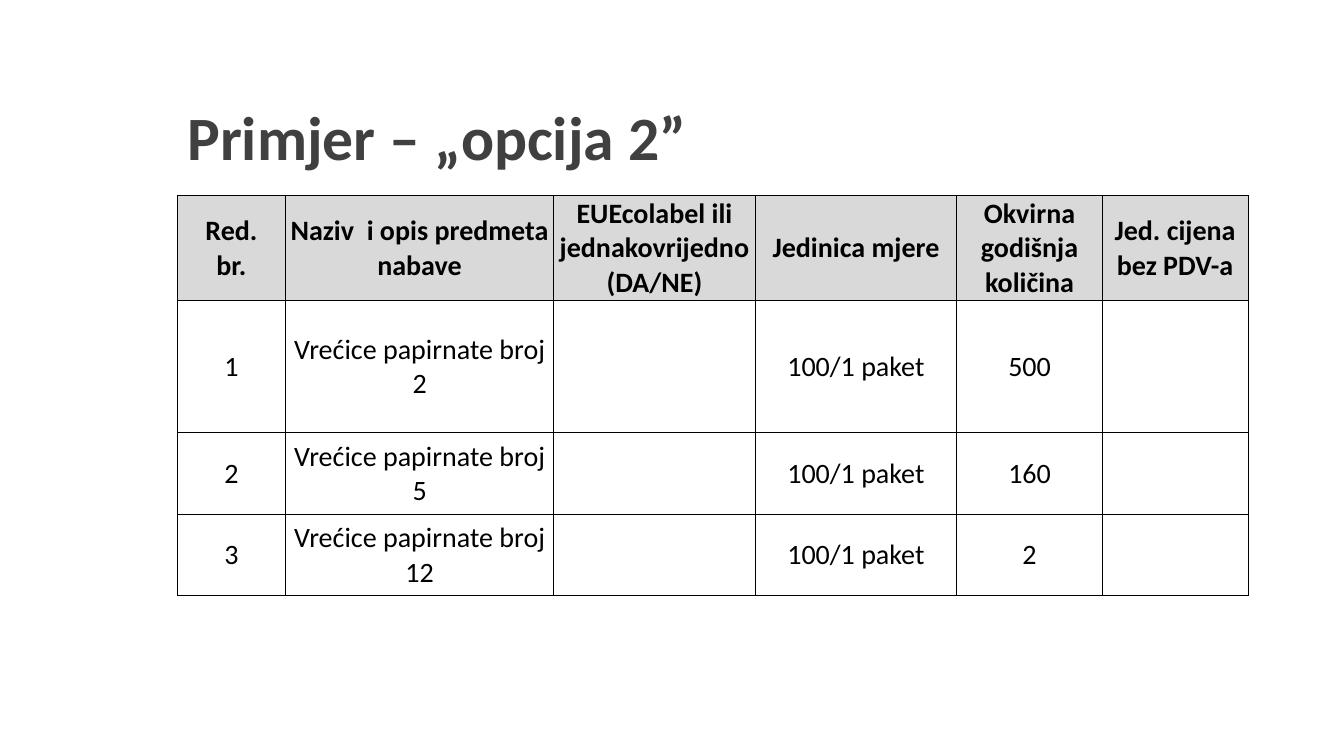
import pptx
import pptx.dml.color
import pptx.enum.text
import pptx.oxml
import pptx.oxml.ns
import pptx.util
from dataclasses import dataclass


@dataclass(frozen=True)
class Theme:
    font: str = "Calibri"
    title_color: str = "404040"
    text_color: str = "000000"
    header_fill: str = "D9D9D9"
    body_fill: str = "FFFFFF"
    border_color: str = "000000"
    border_width: float = 0.5
    title_size: int = 44
    table_size: int = 20


THEME = Theme()
SLIDE_WIDTH = pptx.util.Inches(13.33)
SLIDE_HEIGHT = pptx.util.Inches(7.5)

LEFT = 13.2
TITLE_TOP, TITLE_WIDTH, TITLE_HEIGHT = 11.33, 78.24, 14.53
TABLE_TOP = TITLE_TOP + TITLE_HEIGHT
COLUMN_SHARES = [8.05, 19.95, 15, 15, 10.83, 10.83]
ROW_SHARES = [13.87, 17.47, 10.8, 10.8]

HEADER = [
    "Red.\vbr.",
    "Naziv  i opis predmeta nabave",
    "EUEcolabel ili jednakovrijedno (DA/NE)",
    "Jedinica mjere",
    "Okvirna godišnja količina",
    "Jed. cijena bez PDV-a",
]
ITEMS = [
    ["1", "Vrećice papirnate broj 2", "", "100/1 paket", "500", ""],
    ["2", "Vrećice papirnate broj 5", "", "100/1 paket", "160", ""],
    ["3", "Vrećice papirnate broj 12", "", "100/1 paket", "2", ""],
]


def across(share):
    return round(SLIDE_WIDTH * share / 100)


def down(share):
    return round(SLIDE_HEIGHT * share / 100)


def set_attributes(target, values):
    for name, value in values.items():
        setattr(target, name, value)


def write_text(paragraph, text, size, color, bold):
    paragraph.text = text
    for run in paragraph.runs:
        set_attributes(run.font, {
            "name": THEME.font, "size": pptx.util.Pt(size), "bold": bold,
        })
        run.font.color.rgb = pptx.dml.color.RGBColor.from_string(color)


def add_title(slide, text):
    box = slide.shapes.add_textbox(
        across(LEFT), down(TITLE_TOP), across(TITLE_WIDTH), down(TITLE_HEIGHT))
    set_attributes(box.text_frame, {
        "word_wrap": True,
        "vertical_anchor": pptx.enum.text.MSO_ANCHOR.MIDDLE,
    })
    paragraph = box.text_frame.paragraphs[0]
    paragraph.line_spacing = 0.9
    write_text(paragraph, text, THEME.title_size, THEME.title_color, True)


def add_borders(cell):
    properties = cell._tc.get_or_add_tcPr()
    width = pptx.util.Pt(THEME.border_width)
    for position, side in enumerate(("lnL", "lnR", "lnT", "lnB")):
        properties.insert(position, pptx.oxml.parse_xml(
            f'<a:{side} {pptx.oxml.ns.nsdecls("a")} w="{width}"><a:solidFill>'
            f'<a:srgbClr val="{THEME.border_color}"/></a:solidFill></a:{side}>'))


def format_cell(cell, text, fill, bold):
    margin = pptx.util.Inches(0.01)
    set_attributes(cell, {
        "margin_left": margin, "margin_right": margin,
        "margin_top": margin, "margin_bottom": 0,
        "vertical_anchor": pptx.enum.text.MSO_ANCHOR.MIDDLE,
    })
    if fill:
        cell.fill.solid()
        cell.fill.fore_color.rgb = pptx.dml.color.RGBColor.from_string(fill)
    else:
        cell.fill.background()
    paragraph = cell.text_frame.paragraphs[0]
    paragraph.alignment = pptx.enum.text.PP_ALIGN.CENTER
    if text:
        write_text(paragraph, text, THEME.table_size, THEME.text_color, bold)
    add_borders(cell)


def add_price_table(slide, header, items):
    records = [header] + items
    table = slide.shapes.add_table(
        len(records), len(header), across(LEFT), down(TABLE_TOP),
        across(sum(COLUMN_SHARES)), down(sum(ROW_SHARES))).table
    table.horz_banding = False
    for column, share in zip(table.columns, COLUMN_SHARES):
        column.width = across(share)
    for row, share in zip(table.rows, ROW_SHARES):
        row.height = down(share)
    for row_index, record in enumerate(records):
        is_header = row_index == 0
        for column_index, text in enumerate(record):
            body_fill = THEME.body_fill if column_index else None
            fill = THEME.header_fill if is_header else body_fill
            format_cell(table.cell(row_index, column_index), text, fill, is_header)


def main():
    presentation = pptx.Presentation()
    set_attributes(presentation, {
        "slide_width": SLIDE_WIDTH, "slide_height": SLIDE_HEIGHT,
    })
    slide = presentation.slides.add_slide(presentation.slide_layouts[6])
    add_title(slide, "Primjer – „opcija 2”")
    add_price_table(slide, HEADER, ITEMS)
    presentation.save("out.pptx")


if __name__ == "__main__":
    main()
